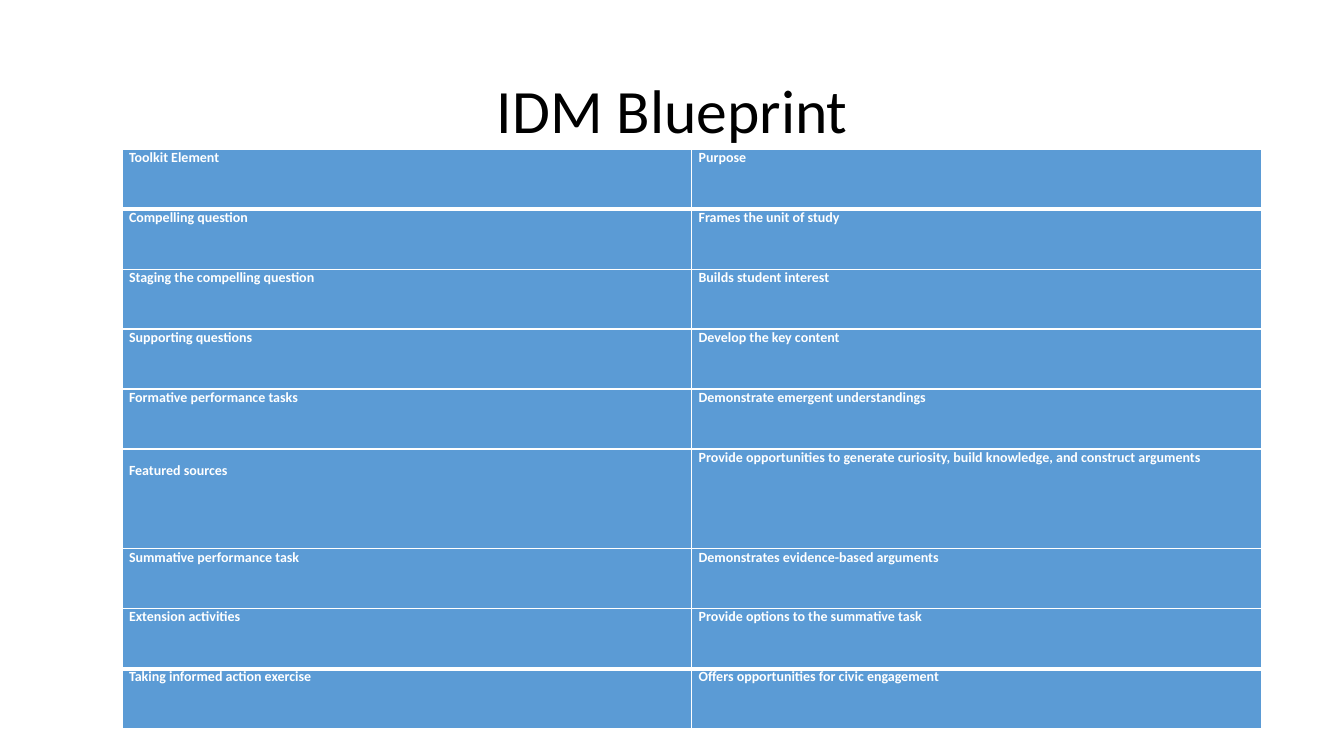
from lxml import etree
from pptx import Presentation
from pptx.dml.color import RGBColor
from pptx.enum.text import MSO_ANCHOR, PP_ALIGN
from pptx.oxml.ns import qn
from pptx.util import Inches, Pt

MIDDLE = MSO_ANCHOR.MIDDLE
CENTER = PP_ALIGN.CENTER
COLORS = {"ink": "000000", "paper": "FFFFFF", "cell": "5B9BD5"}
FONT = "Calibri"
THIN, THICK = 1, 3
HEIGHT, TALL = 5.75, 0.99
TALL_ROW = 5

ROWS = [
    ("Toolkit Element", "Purpose"),
    ("Compelling question", "Frames the unit of study"),
    ("Staging the compelling question", "Builds student interest"),
    ("Supporting questions", "Develop the key content"),
    ("Formative performance tasks", "Demonstrate emergent understandings"),
    ("Featured sources",
     "Provide opportunities to generate curiosity, build knowledge, and construct arguments"),
    ("Summative performance task", "Demonstrates evidence-based arguments"),
    ("Extension activities", "Provide options to the summative task"),
    ("Taking informed action exercise", "Offers opportunities for civic engagement"),
]


class Deck:
    def __init__(self):
        self.prs = Presentation()
        self.prs.slide_width = Inches(13.33)
        self.prs.slide_height = Inches(7.5)
        self.slide = self.prs.slides.add_slide(self.prs.slide_layouts[6])

    def add_text(self, para, text, size, color, bold=False):
        run = para.add_run()
        run.text = text
        run.font.name = FONT
        run.font.size = Pt(size)
        run.font.bold = bold
        run.font.color.rgb = RGBColor.from_string(COLORS[color])

    def title(self, text, x, y, w, h):
        box = self.slide.shapes.add_textbox(Inches(x), Inches(y), Inches(w), Inches(h))
        frame = box.text_frame
        frame.word_wrap = True
        frame.vertical_anchor = MIDDLE
        para = frame.paragraphs[0]
        para.alignment = CENTER
        para.line_spacing = 0.9
        self.add_text(para, text, 44, "ink")

    def border(self, cell, top, bottom):
        """Draw all four sides; left and right stay thin."""
        props = cell._tc.get_or_add_tcPr()
        sides = {"lnL": THIN, "lnR": THIN, "lnT": top, "lnB": bottom}
        for spot, (side, width) in enumerate(sides.items()):
            line = etree.Element(qn("a:" + side), w=str(Pt(width)))
            fill = etree.SubElement(line, qn("a:solidFill"))
            etree.SubElement(fill, qn("a:srgbClr"), val=COLORS["paper"])
            props.insert(spot, line)

    def cell(self, cell, text):
        cell.fill.solid()
        cell.fill.fore_color.rgb = RGBColor.from_string(COLORS["cell"])
        cell.margin_left = Inches(0.07)
        cell.margin_top = cell.margin_right = cell.margin_bottom = 0
        para = cell.text_frame.paragraphs[0]
        para.space_before = Pt(3)
        self.add_text(para, text, 10, "paper", bold=True)

    def table(self, rows, x, y, w):
        last = len(rows) - 1
        frame = self.slide.shapes.add_table(
            len(rows), 2, Inches(x), Inches(y), Inches(w), Inches(HEIGHT))
        table = frame.table
        for col in table.columns:
            col.width = Inches(w / 2)
        for r, texts in enumerate(rows):
            tall = r == TALL_ROW
            table.rows[r].height = Inches(TALL if tall else (HEIGHT - TALL) / last)
            top = THICK if r in (1, last) else THIN
            bottom = THICK if r in (0, last - 1) else THIN
            for c, text in enumerate(texts):
                self.cell(table.cell(r, c), text)
                self.border(table.cell(r, c), top, bottom)
        table.cell(TALL_ROW, 0).margin_top = Inches(0.13)


def main():
    deck = Deck()
    deck.title("IDM Blueprint", 0.92, 0.4, 11.5, 1.45)
    deck.table(ROWS, 1.21, 1.48, 11.3)
    deck.prs.save("out.pptx")


if __name__ == "__main__":
    main()
